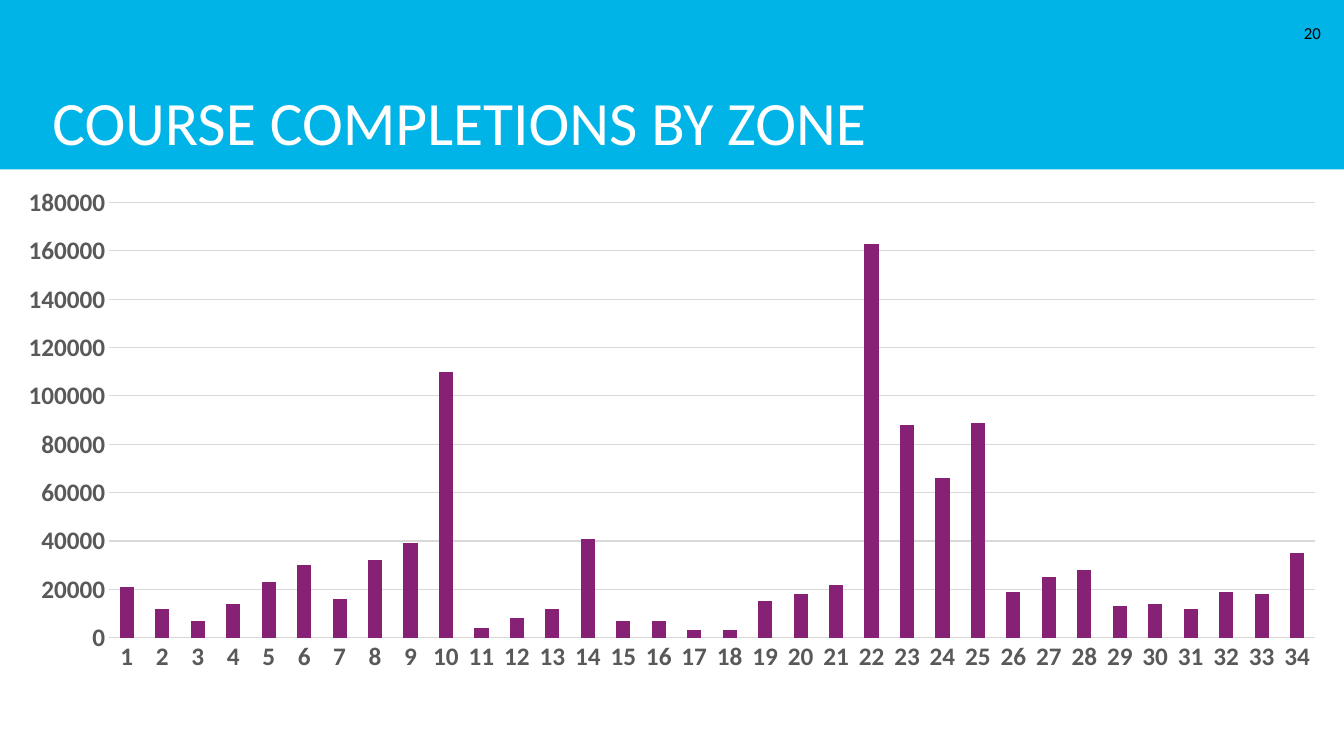
from lxml import etree
from pptx import Presentation
from pptx.chart.data import CategoryChartData
from pptx.dml.color import RGBColor
from pptx.enum import chart as charts, shapes, text
from pptx.oxml.ns import qn
from pptx.util import Inches, Pt

FONT = "Calibri"
GREY, LIGHT_GREY = "595959", "D9D9D9"
COMPLETIONS = [
    21000, 12000, 7000, 14000, 23000, 30000, 16000, 32000, 39000, 110000,
    4000, 8000, 12000, 41000, 7000, 7000, 3000, 3000, 15000, 18000,
    22000, 163000, 88000, 66000, 89000, 19000, 25000, 28000, 13000, 14000,
    12000, 19000, 18000, 35000,
]


def rgb(color):
    return RGBColor.from_string(color)


def style_font(font, size, color, bold=False):
    font.name, font.size, font.bold = FONT, Pt(size), bold
    font.color.rgb = rgb(color)


prs = Presentation()
prs.slide_width, prs.slide_height = Inches(13.33), Inches(7.5)
s = prs.slides.add_slide(prs.slide_layouts[6])

# Header band
band = s.shapes.add_shape(shapes.MSO_SHAPE.RECTANGLE, 0, 0, prs.slide_width, Inches(1.68))
band.shadow.inherit = False
band.fill.solid()
band.fill.fore_color.rgb = rgb("01B4E7")
band.line.fill.background()

# Title
title = s.shapes.add_textbox(Inches(0.42), 0, Inches(12.58), Inches(1.68))
tf = title.text_frame
tf.word_wrap = True
tf.vertical_anchor = text.MSO_ANCHOR.BOTTOM
tf.margin_top, tf.margin_bottom = 0, Inches(0.1)
p = tf.paragraphs[0]
p.text = "COURSE COMPLETIONS BY ZONE"
p.line_spacing = 0.9
style_font(p.font, 44, "FFFFFF")

# Page number
number = s.shapes.add_textbox(Inches(12.74), Inches(0.13), Inches(0.46), Inches(0.4))
tf = number.text_frame
tf.word_wrap = True
tf.vertical_anchor = text.MSO_ANCHOR.MIDDLE
p = tf.paragraphs[0]
p.text = "20"
p.alignment = text.PP_ALIGN.RIGHT
style_font(p.font, 12, "000000")

# Column chart
data = CategoryChartData()
data.categories = [str(zone) for zone in range(1, len(COMPLETIONS) + 1)]
data.add_series("Series 1", COMPLETIONS)
chart = s.shapes.add_chart(
    charts.XL_CHART_TYPE.COLUMN_STACKED,
    0, Inches(1.81), Inches(13.2), Inches(5.69), data,
).chart
chart.has_title = False
chart.has_legend = False
style_font(chart.font, 10, "000000")

plot = chart.plots[0]
plot.gap_width, plot.overlap = 150, 100
plot.vary_by_categories = False
fill = plot.series[0].format.fill
fill.solid()
fill.fore_color.rgb = rgb("872175")

for axis in (chart.category_axis, chart.value_axis):
    axis.major_tick_mark = axis.minor_tick_mark = charts.XL_TICK_MARK.NONE
    style_font(axis.tick_labels.font, 18, GREY, bold=True)
chart.category_axis.has_major_gridlines = False
value_axis = chart.value_axis
value_axis.minimum_scale, value_axis.maximum_scale = 0, 180000
value_axis.major_unit = 20000
value_axis.format.line.fill.background()
for line in (chart.category_axis.format.line, value_axis.major_gridlines.format.line):
    line.color.rgb = rgb(LIGHT_GREY)
    line.width = Pt(0.75)

# Fixed inner plot area, as fractions of the chart
plot_area = chart.element.find(".//" + qn("c:plotArea"))
layout = plot_area.find(qn("c:layout"))
if layout is None:
    layout = etree.Element(qn("c:layout"))
    plot_area.insert(0, layout)
manual = etree.SubElement(layout, qn("c:manualLayout"))
for tag, val in (
    ("layoutTarget", "inner"), ("xMode", "edge"), ("yMode", "edge"),
    ("x", "0.082"), ("y", "0.035"), ("w", "0.906"), ("h", "0.759"),
):
    etree.SubElement(manual, qn("c:" + tag)).set("val", val)

prs.save("out.pptx")
